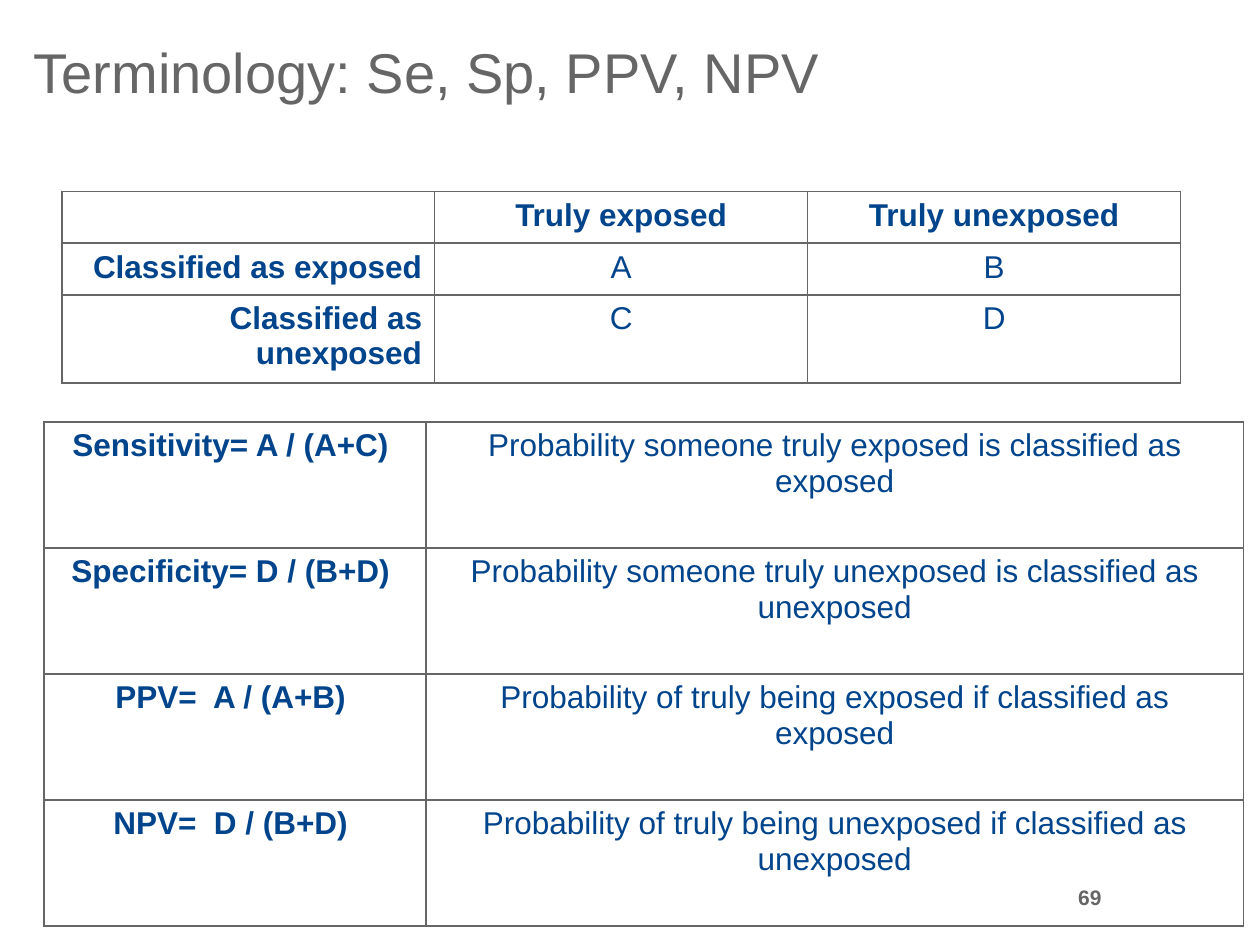
"""Build the slide on sensitivity, specificity and predictive values."""
from lxml import etree
from pptx import Presentation
from pptx.dml.color import RGBColor
from pptx.enum.text import MSO_ANCHOR, PP_ALIGN
from pptx.oxml.ns import qn
from pptx.util import Inches, Pt

LEFT, CENTER, RIGHT = PP_ALIGN.LEFT, PP_ALIGN.CENTER, PP_ALIGN.RIGHT
TOP, MIDDLE = MSO_ANCHOR.TOP, MSO_ANCHOR.MIDDLE
GREY, BLUE = "666666", "00448C"


def write(frame, text, size, color, bold, align):
    para = frame.paragraphs[0]
    para.alignment = align
    span = para.add_run()
    span.text = text
    span.font.name = "Arial"
    span.font.size = Pt(size)
    span.font.bold = bold
    span.font.color.rgb = RGBColor.from_string(color)


def outline(cell):
    cell_format = cell._tc.get_or_add_tcPr()
    for side in ("a:lnL", "a:lnR", "a:lnT", "a:lnB"):
        line = etree.SubElement(cell_format, qn(side), w=str(Pt(1)))
        fill = etree.SubElement(line, qn("a:solidFill"))
        etree.SubElement(fill, qn("a:srgbClr"), val=GREY)
    cell.fill.background()


deck = Presentation()
deck.slide_width, deck.slide_height = Inches(10), Inches(7.5)
page = deck.slides.add_slide(deck.slide_layouts[6])

labels = [
    ("69", (8.25, 6.83, 0.59, 0.58), 12, True, RIGHT, MIDDLE),
    ("Terminology: Se, Sp, PPV, NPV", (0.17, 0.25, 9.21, 0.64), 32, False, LEFT, TOP),
]
for text, place, size, bold, align, anchor in labels:
    box = page.shapes.add_textbox(*map(Inches, place))
    box.text_frame.word_wrap = True
    box.text_frame.vertical_anchor = anchor
    write(box.text_frame, text, size, GREY, bold, align)

classification = [
    ["", "Truly exposed", "Truly unexposed"],
    ["Classified as exposed", "A", "B"],
    ["Classified as unexposed", "C", "D"],
]
measures = [
    ["Sensitivity= A / (A+C) ", "Probability someone truly exposed is classified as exposed"],
    ["Specificity= D / (B+D) ", "Probability someone truly unexposed is classified as unexposed"],
    ["PPV=  A / (A+B) ", "Probability of truly being exposed if classified as exposed"],
    ["NPV=  D / (B+D) ", "Probability of truly being unexposed if classified as unexposed"],
]
tables = [
    (classification, 0.49, 1.52, [2.96] * 3, [0.41, 0.41, 0.7], RIGHT, True),
    (measures, 0.35, 3.35, [3.03, 6.49], [1] * 4, CENTER, False),
]
for content, left, top, widths, heights, first_align, has_header in tables:
    place = map(Inches, (left, top, sum(widths), sum(heights)))
    table = page.shapes.add_table(len(heights), len(widths), *place).table
    table.first_row = table.horz_banding = False
    for column, width in zip(table.columns, widths):
        column.width = Inches(width)
    for row_index, (row, height) in enumerate(zip(table.rows, heights)):
        row.height = Inches(height)
        for column_index, cell in enumerate(row.cells):
            outline(cell)
            text = content[row_index][column_index]
            if text:
                bold = column_index == 0 or (has_header and row_index == 0)
                align = first_align if column_index == 0 else CENTER
                write(cell.text_frame, text, 18, BLUE, bold, align)

deck.save("out.pptx")
